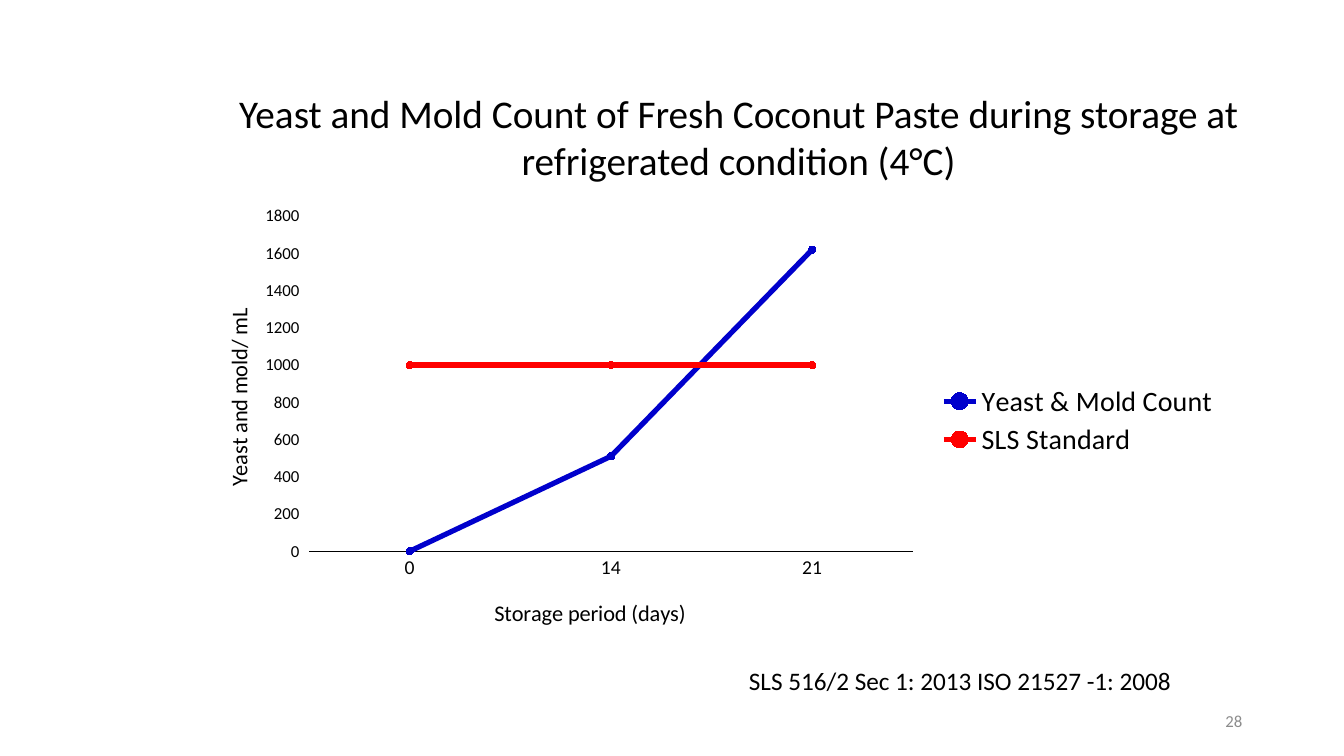
from dataclasses import dataclass

from lxml import etree
from pptx import Presentation
from pptx import util as u
from pptx.chart.data import CategoryChartData
from pptx.dml.color import RGBColor
from pptx.enum import chart as ch
from pptx.enum import text
from pptx.oxml.ns import qn


@dataclass(frozen=True)
class Theme:
    font: str = "Calibri"
    ink: str = "000000"
    muted: str = "8C8C8C"
    count: str = "0000CC"
    standard: str = "FF0000"
    title: int = 28
    legend: int = 20
    source: int = 18
    axis_title: int = 16
    category: int = 14
    small: int = 12


theme = Theme()


def set_font(font, size, color=theme.ink):
    values = {"name": theme.font, "size": u.Pt(size), "bold": False}
    for name, value in values.items():
        setattr(font, name, value)
    font.color.rgb = RGBColor.from_string(color)


def place(element, **fractions):
    """Give a chart part a manual layout in fractions of the chart's size."""
    for old in element.findall(qn("c:layout")):
        element.remove(old)
    before = [e for e in element if e.tag in (qn("c:tx"), qn("c:legendPos"))]
    layout = etree.Element(qn("c:layout"))
    manual = etree.SubElement(layout, qn("c:manualLayout"))
    if element.tag == qn("c:plotArea"):
        etree.SubElement(manual, qn("c:layoutTarget")).set("val", "inner")
    for side in "xy":
        etree.SubElement(manual, qn(f"c:{side}Mode")).set("val", "edge")
    for name, value in fractions.items():
        etree.SubElement(manual, qn(f"c:{name}")).set("val", str(value))
    element.insert(len(before), layout)


prs = Presentation()
prs.slide_width, prs.slide_height = u.Inches(13.33), u.Inches(7.5)
s = prs.slides.add_slide(prs.slide_layouts[6])

# Heading, source note and slide number
align, anchor = text.PP_ALIGN, text.MSO_ANCHOR
labels = [
    ("28", (9.42, 6.95, 3, 0.4), theme.small, theme.muted,
     align.RIGHT, anchor.MIDDLE, True),
    ("Yeast and Mold Count of Fresh Coconut Paste during storage at "
     "refrigerated condition (4°C)", (2.02, 1.13, 10.61, 0.45),
     theme.title, theme.ink, align.CENTER, anchor.MIDDLE, True),
    ("SLS 516/2 Sec 1: 2013 ISO 21527 -1: 2008", (7.33, 6.55, 4.44, 0.4),
     theme.source, theme.ink, align.LEFT, anchor.TOP, False),
]
for words, box, size, color, alignment, vertical, wrap in labels:
    tf = s.shapes.add_textbox(*map(u.Inches, box)).text_frame
    tf.word_wrap, tf.vertical_anchor = wrap, vertical
    p = tf.paragraphs[0]
    p.alignment = alignment
    r = p.add_run()
    r.text = words
    set_font(r.font, size, color)

# Line chart
data = CategoryChartData()
data.categories = ["0", "14", "21"]
data.add_series("Yeast & Mold Count", [0, 510, 1620])
data.add_series("SLS Standard", [1000, 1000, 1000])
chart = s.shapes.add_chart(
    ch.XL_CHART_TYPE.LINE_MARKERS,
    *map(u.Inches, (1.87, 1.96, 10.32, 4.42)), data).chart
set_font(chart.font, 10)
chart.has_title = False
plot = chart.plots[0]
plot.vary_by_categories = False

for series, color in zip(plot.series, (theme.count, theme.standard)):
    rgb = RGBColor.from_string(color)
    series.smooth = False
    series.format.line.width = u.Pt(3.75)
    series.format.line.color.rgb = rgb
    marker = series.marker
    marker.style, marker.size = ch.XL_MARKER_STYLE.CIRCLE, 5
    marker.format.fill.solid()
    marker.format.fill.fore_color.rgb = rgb
    marker.format.line.color.rgb = rgb

cat, val = chart.category_axis, chart.value_axis
axes = [
    (cat, "Storage period (days)", theme.category, ch.XL_TICK_MARK.NONE,
     "0", {"x": 0.29, "y": 0.89}),
    (val, "Yeast and mold/ mL", theme.small, ch.XL_TICK_MARK.OUTSIDE,
     "-5400000", {"x": 0.03, "y": 0.24}),
]
for axis, words, size, tick, rotation, spot in axes:
    axis.has_major_gridlines = False
    axis.major_tick_mark = tick
    axis.minor_tick_mark = ch.XL_TICK_MARK.NONE
    set_font(axis.tick_labels.font, size)
    tf = axis.axis_title.text_frame
    tf.text = words
    set_font(tf.paragraphs[0].runs[0].font, theme.axis_title)
    title = axis._element.find(qn("c:title"))
    title.find(f".//{qn('a:bodyPr')}").set("rot", rotation)
    place(title, **spot)

cat.format.line.width = u.Pt(0.75)
cat.format.line.color.rgb = RGBColor.from_string(theme.ink)
val.format.line.fill.background()
val.minimum_scale, val.maximum_scale, val.major_unit = 0, 1800, 200

chart.has_legend = True
legend = chart.legend
legend.position = ch.XL_LEGEND_POSITION.RIGHT
legend.include_in_layout = False
set_font(legend.font, theme.legend)
place(legend._element, x=0.72, y=0.41, w=0.27, h=0.18)
place(plot._element.getparent(), x=0.116, y=0.042, w=0.58, h=0.752)

prs.save("out.pptx")
